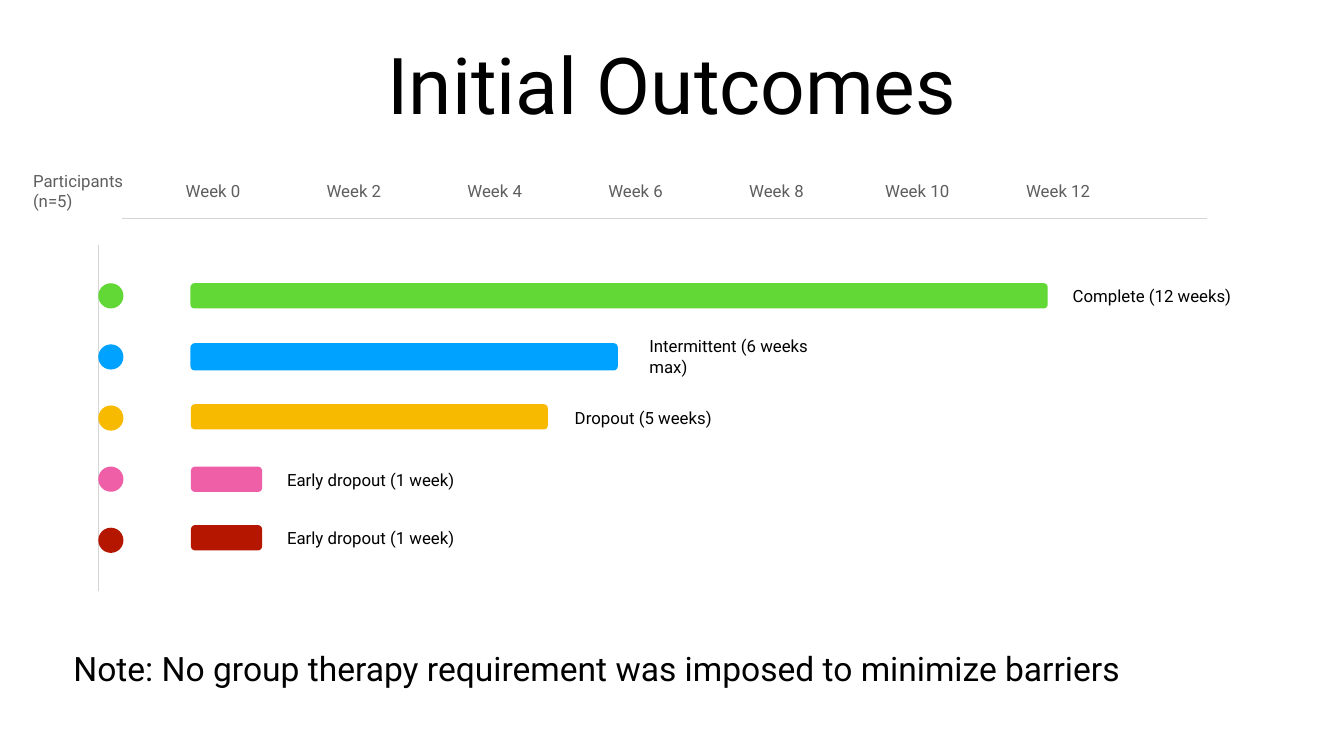
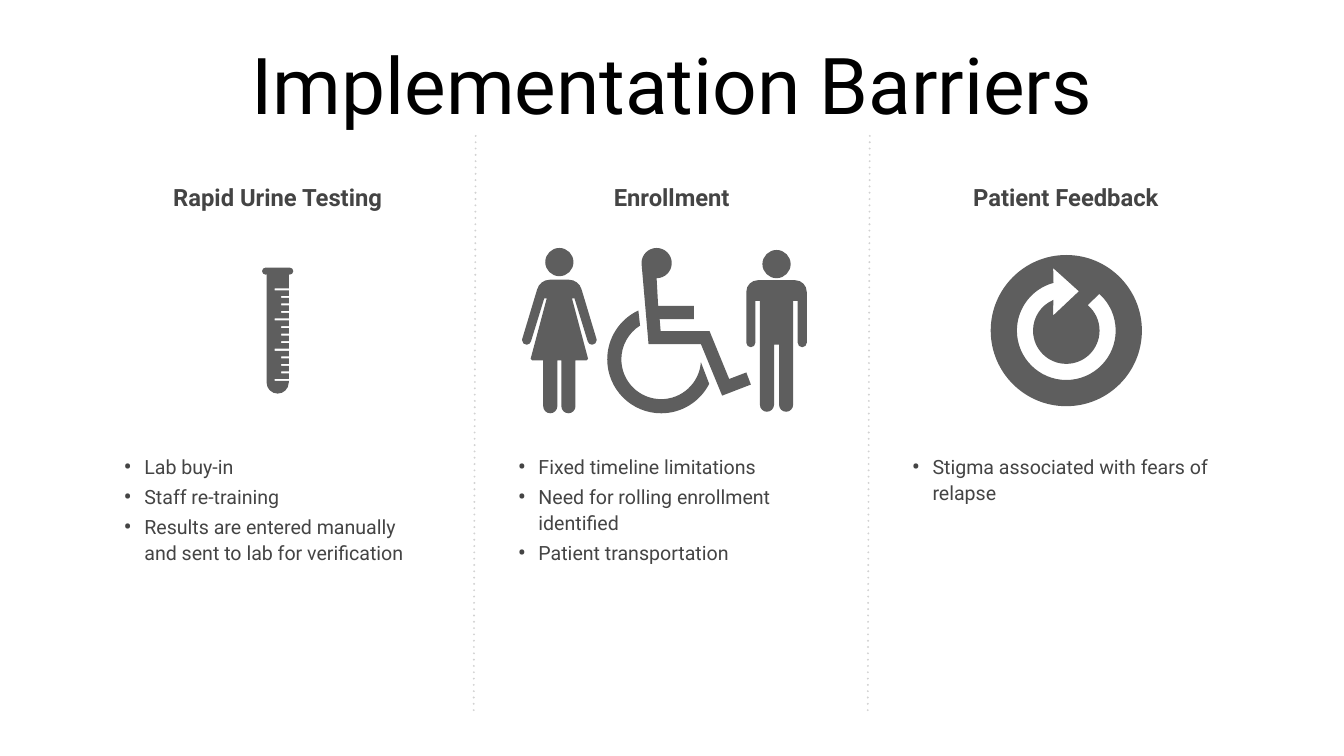
from copy import deepcopy
from dataclasses import dataclass
from itertools import pairwise
from math import cos, radians, sin, tan

from lxml.etree import SubElement
from pptx import Presentation
from pptx.dml.color import RGBColor
from pptx.enum.shapes import MSO_CONNECTOR as CONN, MSO_SHAPE as SHAPE
from pptx.enum.text import MSO_ANCHOR as ANCHOR, MSO_AUTO_SIZE as FIT, PP_ALIGN as ALIGN
from pptx.oxml.ns import qn
from pptx.util import Inches, Pt


@dataclass(frozen=True)
class Theme:
    font: str = "Roboto"
    black: str = "000000"
    grey: str = "5E5E5E"
    body: str = "444444"
    axis: str = "D5D5D5"
    divider: str = "D2D2D2"
    green: str = "61D836"
    blue: str = "00A2FF"
    yellow: str = "F7BA01"
    pink: str = "EF5FA7"
    red: str = "B51600"
    title_size: int = 112
    note_size: int = 48
    heading_size: int = 34
    bullet_size: int = 28
    label_size: int = 24


THEME = Theme()


class Deck:
    def __init__(self, theme):
        self.theme = theme
        self.prs = Presentation()
        self.prs.slide_width = Inches(26.67)
        self.prs.slide_height = Inches(15)
        self.slide = None

    def new_slide(self, title):
        self.slide = self.prs.slides.add_slide(self.prs.slide_layouts[6])
        self.text([title], 1.85, 0.39, 22.97, 2.5, self.theme.title_size,
                  align=ALIGN.CENTER, wrap=True, fit=FIT.NONE)

    def text(self, lines, x, y, w, h, size, color=None, bold=False, align=ALIGN.LEFT,
             anchor=ANCHOR.MIDDLE, wrap=False, fit=FIT.SHAPE_TO_FIT_TEXT):
        sp = self.slide.shapes.add_textbox(Inches(x), Inches(y), Inches(w), Inches(h))
        tf = sp.text_frame
        tf.word_wrap = wrap
        tf.auto_size = fit
        tf.vertical_anchor = anchor
        tf.margin_left = tf.margin_right = Pt(4)
        tf.margin_top = tf.margin_bottom = Pt(4)
        for i, line in enumerate(lines):
            p = tf.add_paragraph() if i else tf.paragraphs[0]
            p.alignment = align
            r = p.add_run()
            r.text = line
            r.font.name = self.theme.font
            r.font.size = Pt(size)
            r.font.bold = bold
            r.font.color.rgb = RGBColor.from_string(color or self.theme.black)
        return tf

    def bullets(self, lines, x, y, w, h):
        tf = self.text(lines, x, y, w, h, self.theme.bullet_size, self.theme.body,
                       anchor=ANCHOR.TOP, wrap=True)
        for p in tf.paragraphs:
            p.line_spacing = 1.1
            p.space_before = Pt(6)
            ppr = p._p.get_or_add_pPr()
            ppr.set("marL", str(Inches(0.41)))
            ppr.set("indent", str(-Inches(0.41)))
            SubElement(ppr, qn("a:buSzPct")).set("val", "125000")
            SubElement(ppr, qn("a:buFont")).set("typeface", self.theme.font)
            SubElement(ppr, qn("a:buChar")).set("char", "•")

    def line(self, x1, y1, x2, y2, color, width, dotted=False):
        cn = self.slide.shapes.add_connector(
            CONN.STRAIGHT, Inches(x1), Inches(y1), Inches(x2), Inches(y2))
        cn.line.color.rgb = RGBColor.from_string(color)
        cn.line.width = Pt(width)
        if dotted:
            ln = cn.line._get_or_add_ln()
            ln.set("cap", "rnd")
            dot = SubElement(SubElement(ln, qn("a:custDash")), qn("a:ds"))
            dot.set("d", "100000")
            dot.set("sp", "200000")
        SubElement(cn._element.spPr, qn("a:effectLst"))

    def paint(self, sp, color):
        sp.shadow.inherit = False
        sp.fill.solid()
        sp.fill.fore_color.rgb = RGBColor.from_string(color)
        sp.line.fill.background()

    def rounded(self, x, y, w, h, color, radius):
        sp = self.slide.shapes.add_shape(
            SHAPE.ROUNDED_RECTANGLE, Inches(x), Inches(y), Inches(w), Inches(h))
        sp.adjustments[0] = radius
        self.paint(sp, color)

    def icon(self, *outlines):
        builder = None
        segments = []
        for outline in outlines:
            first, *rest = [(Inches(s[-2]), Inches(s[-1])) for s in outline]
            if builder is None:
                builder = self.slide.shapes.build_freeform(*first)
            else:
                builder.move_to(*first)
            builder.add_line_segments(rest, close=False)
            segments += outline[1:]
        sp = builder.convert_to_shape()
        for node, segment in zip(list(sp._element.iter(qn("a:lnTo"))), segments):
            if len(segment) == 6:
                self.bend(node, segment, sp)
        self.paint(sp, self.theme.grey)

    def bend(self, node, segment, sp):
        node.tag = qn("a:cubicBezTo")
        for i in range(2):
            pt = deepcopy(node[-1])
            pt.set("x", str(Inches(segment[2 * i]) - sp.left))
            pt.set("y", str(Inches(segment[2 * i + 1]) - sp.top))
            node.insert(i, pt)


def arc(cx, cy, r, start, end):
    low, high = sorted((start, end))
    stops = [low, *(a for a in range(-360, 721, 90) if low < a < high), high]
    if start > end:
        stops.reverse()
    segments = [(cx + r * cos(radians(start)), cy + r * sin(radians(start)))]
    for a, b in pairwise(map(radians, stops)):
        k = 4 / 3 * tan((b - a) / 4)
        segments.append((cx + r * (cos(a) - k * sin(a)), cy + r * (sin(a) + k * cos(a)),
                         cx + r * (cos(b) + k * sin(b)), cy + r * (sin(b) - k * cos(b)),
                         cx + r * cos(b), cy + r * sin(b)))
    return segments


def mirrored(half, cx):
    back = [half[-1][-2:]]
    for before, segment in reversed(list(pairwise(half))):
        back.append((*segment[2:-2], *segment[:-2][:2], *before[-2:]))
    return half + [tuple(v if i % 2 else 2 * cx - v for i, v in enumerate(s)) for s in back]


def draw_woman(deck):
    cx = 11.1
    half = [*arc(11.29, 5.81, 0.26, 270, 345), *arc(11.75, 6.75, 0.09, -15, 165),
            (11.4, 5.92), (11.35, 5.92), (11.67, 7.12), (11.64, 7.15), (11.42, 7.15),
            *arc(11.28, 8.06, 0.14, 0, 180), (11.14, 7.15)]
    deck.icon(arc(cx, 5.2, 0.28, 0, 360), mirrored(half, cx))


def draw_man(deck):
    cx = 15.41
    half = [*arc(15.78, 5.79, 0.23, 270, 360), *arc(15.92, 6.8, 0.09, 0, 180),
            (15.83, 5.97), (15.74, 5.97), *arc(15.6, 8.03, 0.14, 0, 180), (15.46, 6.84)]
    deck.icon(arc(cx, 5.24, 0.28, 0, 360), mirrored(half, cx))


def draw_wheelchair(deck):
    rider = [*arc(13.03, 5.22, 0.3, 180, 450), (13.06, 6.07), (13.77, 6.07),
             (13.77, 6.33), (13.09, 6.33), (13.11, 6.57), (14.08, 6.57), (14.47, 7.52),
             (14.81, 7.39), (14.9, 7.63), (14.33, 7.85), (13.91, 6.83), (12.87, 6.83)]
    wheel = arc(13.12, 7.13, 1.07, 245, 27) + arc(13.12, 7.13, 0.79, 4, 238)
    deck.icon(rider, wheel)


def draw_feedback(deck):
    cx, cy = 21.16, 6.56
    arrow = [(20.9, 5.32), (21.41, 5.78), (20.9, 6.26),
             *arc(cx, cy, 0.66, 247, -50), *arc(cx, cy, 0.98, -48, 255)]
    deck.icon(arc(cx, cy, 1.5, 0, 360), arrow)


def draw_test_tube(deck):
    side = 5.73
    tube = [*arc(5.27, 5.38, 0.07, 270, 90), (5.29, 5.44), *arc(5.51, 7.59, 0.22, 180, 0)]
    for i in reversed(range(13)):
        y = 5.72 + 0.15 * i
        tick = 5.58 if i % 4 else 5.45
        tube += [(side, y + 0.04), (tick, y + 0.04), (tick, y), (side, y)]
    tube += [(side, 5.44), *arc(5.75, 5.38, 0.07, 90, -90)]
    deck.icon(tube)


def outcomes_slide(deck):
    t = deck.theme
    deck.new_slide("Initial Outcomes")
    deck.line(1.96, 11.73, 1.96, 4.87, t.axis, 2)
    deck.line(23.95, 4.34, 2.43, 4.34, t.axis, 2)
    for i in range(7):
        week = 2 * i
        w = 1.41 if week >= 10 else 1.22
        deck.text([f"Week {week}"], 4.24 + 16.77 * i / 6 - w / 2, 3.54, w, 0.5,
                  t.label_size, t.grey)

    participants = [
        (t.green, 3.78, 5.62, 17.01, 0.5, "Complete (12 weeks)", 21.23, 5.62, 3.26),
        (t.blue, 3.78, 6.81, 8.48, 0.54, "Intermittent (6 weeks max)", 12.83, 6.82, 4.05),
        (t.yellow, 3.79, 8.02, 7.08, 0.5, "Dropout (5 weeks)", 11.35, 8.04, 2.83),
        (t.pink, 3.79, 9.26, 1.41, 0.5, "Early dropout (1 week)", 5.64, 9.26, 3.45),
        (t.red, 3.79, 10.42, 1.41, 0.5, "Early dropout (1 week)", 5.64, 10.42, 3.45),
    ]
    for i, (color, x, y, w, h, label, label_x, label_y, label_w) in enumerate(participants):
        deck.rounded(1.95, 5.62 + 4.85 * i / 4, 0.5, 0.5, color, 0.5)
        deck.rounded(x, y, w, h, color, 0.15)
        deck.text([label], label_x, label_y, label_w, 0.5, t.label_size)

    deck.text(["Note: No group therapy requirement was imposed to minimize barriers"],
              1.4, 12.82, 21.08, 0.88, t.note_size)
    deck.text(["Participants (n=5)"], 0.6, 3.54, 2.73, 0.5, t.label_size, t.grey)


def barriers_slide(deck):
    t = deck.theme
    deck.new_slide("Implementation Barriers")
    pitch = 7.82
    for i in range(2):
        x = 9.4 + pitch * i
        deck.line(x, 14.09, x + 0.04, 2.58, t.divider, 3, dotted=True)

    columns = [
        ("Rapid Urine Testing", 4.52, 2.29,
         ["Lab buy-in", "Staff re-training",
          "Results are entered manually and sent to lab for verification"]),
        ("Enrollment", 2.56, 2.29,
         ["Fixed timeline limitations", "Need for rolling enrollment identified",
          "Patient transportation"]),
        ("Patient Feedback", 4.06, 1.09, ["Stigma associated with fears of relapse"]),
    ]
    for i, (heading, w, h, barriers) in enumerate(columns):
        deck.bullets(barriers, 2.4 + pitch * i, 8.93, 6.23, h)
        deck.text([heading], 5.51 + pitch * i - w / 2, 3.58, w, 0.67, t.heading_size,
                  t.body, bold=True, align=ALIGN.CENTER)

    for draw in (draw_woman, draw_man, draw_wheelchair, draw_feedback, draw_test_tube):
        draw(deck)


def main():
    deck = Deck(THEME)
    outcomes_slide(deck)
    barriers_slide(deck)
    deck.prs.save("out.pptx")


if __name__ == "__main__":
    main()
